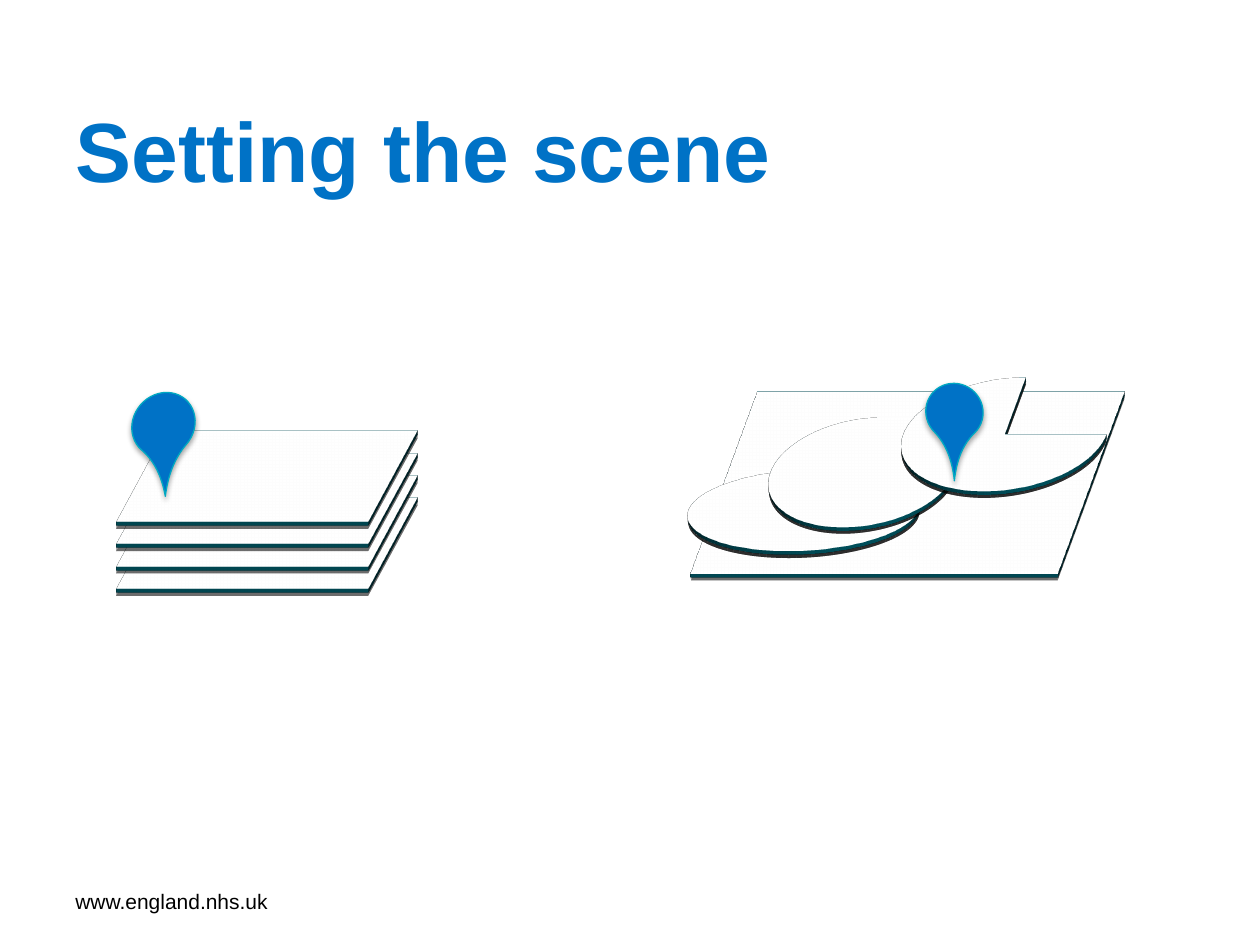
import pptx
import pptx.dml.color
import pptx.enum.shapes
import pptx.enum.text
import pptx.oxml
import pptx.oxml.ns
import pptx.util

Cm = pptx.util.Cm
Pt = pptx.util.Pt
SHAPE = pptx.enum.shapes.MSO_SHAPE
NS = pptx.oxml.ns.nsdecls("a")
BLUE, TEAL, WHITE, BLACK = "0072C6", "00A9C2", "FFFFFF", "000000"


def rgb(value):
    return pptx.dml.color.RGBColor.from_string(value)


def write(shape, text, size, color, bold=False):
    frame = shape.text_frame
    frame.word_wrap = True
    frame.auto_size = pptx.enum.text.MSO_AUTO_SIZE.NONE
    frame.vertical_anchor = pptx.enum.text.MSO_ANCHOR.MIDDLE
    paragraph = frame.paragraphs[0]
    paragraph.alignment = pptx.enum.text.PP_ALIGN.LEFT
    run = paragraph.add_run()
    run.text = text
    run.font.name = "Arial"
    run.font.size = Pt(size)
    run.font.bold = bold
    run.font.color.rgb = rgb(color)


def figure(shapes, kind, left, top, width, height, fill, line_width):
    """A filled preset shape with a teal outline and a soft shadow."""
    shape = shapes.add_shape(kind, Cm(left), Cm(top), Cm(width), Cm(height))
    shape.fill.solid()
    shape.fill.fore_color.rgb = rgb(fill)
    shape.line.color.rgb = rgb(TEAL)
    shape.line.width = Pt(line_width)
    shape.shadow.inherit = False
    effects = shape._element.spPr.find(pptx.oxml.ns.qn("a:effectLst"))
    effects.append(pptx.oxml.parse_xml(
        f'<a:outerShdw {NS} blurRad="{Pt(3.1)}" dist="{Pt(1.8)}" '
        f'dir="5400000" rotWithShape="0"><a:srgbClr val="{BLACK}">'
        '<a:alpha val="35000"/></a:srgbClr></a:outerShdw>'))
    return shape


def plate(shapes, kind, left, top, width, height, tilt):
    """A white plate laid back by tilt degrees in an oblique view."""
    shape = figure(shapes, kind, left, top, width, height, WHITE, 6)
    latitude = (360 - tilt) * 60000
    shape._element.spPr.append(pptx.oxml.parse_xml(
        f'<a:scene3d {NS}><a:camera prst="obliqueTopRight">'
        f'<a:rot lat="{latitude}" lon="0" rev="0"/></a:camera>'
        '<a:lightRig rig="threePt" dir="t"/></a:scene3d>'))
    shape._element.spPr.append(pptx.oxml.parse_xml(
        f'<a:sp3d {NS} extrusionH="{Pt(2.5)}"/>'))


def pin(shapes, left, top, width, height, rotation, tip):
    marker = figure(shapes, SHAPE.TEAR, left, top, width, height, BLUE, 0.75)
    marker.adjustments[0] = tip
    marker.rotation = rotation


def layer_stack(slide, left, top):
    shapes = slide.shapes.add_group_shape().shapes
    for level in reversed(range(4)):
        plate(shapes, SHAPE.RECTANGLE, left + 0.22, top + 0.45 * level,
              5.08, 4.78, tilt=80)
    pin(shapes, left, top + 0.74, 1.35, 1.22, 130.6, 1.591)


def overlapping_areas(slide, left, top):
    shapes = slide.shapes.add_group_shape().shapes
    areas = [
        (SHAPE.RECTANGLE, 0.71, 0, 7.39, 6.76),
        (SHAPE.OVAL, 0, 2.41, 4.62, 3.05),
        (SHAPE.TEAR, 1.65, 1.14, 3.71, 4.06),
        (SHAPE.PIE, 4.32, 0.28, 4.09, 4.24),
    ]
    for kind, x, y, width, height in areas:
        plate(shapes, kind, left + x, top + y, width, height, tilt=70)
    pin(shapes, left + 4.78, top + 1.37, 1.14, 1.17, 135.8, 1.699)


def heading(slide, left, top, width, height):
    title = slide.shapes.title
    title.left, title.top = Cm(left), Cm(top)
    title.width, title.height = Cm(width), Cm(height)
    write(title, "Setting the scene", size=48, color=BLUE, bold=True)


def web_address(slide, left, top, width, height):
    address = slide.shapes.add_textbox(Cm(left), Cm(top), Cm(width), Cm(height))
    write(address, "www.england.nhs.uk", size=12, color=BLACK)


def main():
    deck = pptx.Presentation()
    deck.slide_width, deck.slide_height = Cm(25.4), Cm(19.05)
    slide = deck.slides.add_slide(deck.slide_layouts[5])
    web_address(slide, 1.27, 17.65, 5.92, 1.02)
    heading(slide, 1.27, 2.08, 20.45, 1.85)
    layer_stack(slide, 2.62, 7.21)
    overlapping_areas(slide, 13.89, 6.35)
    deck.save("out.pptx")


if __name__ == "__main__":
    main()
